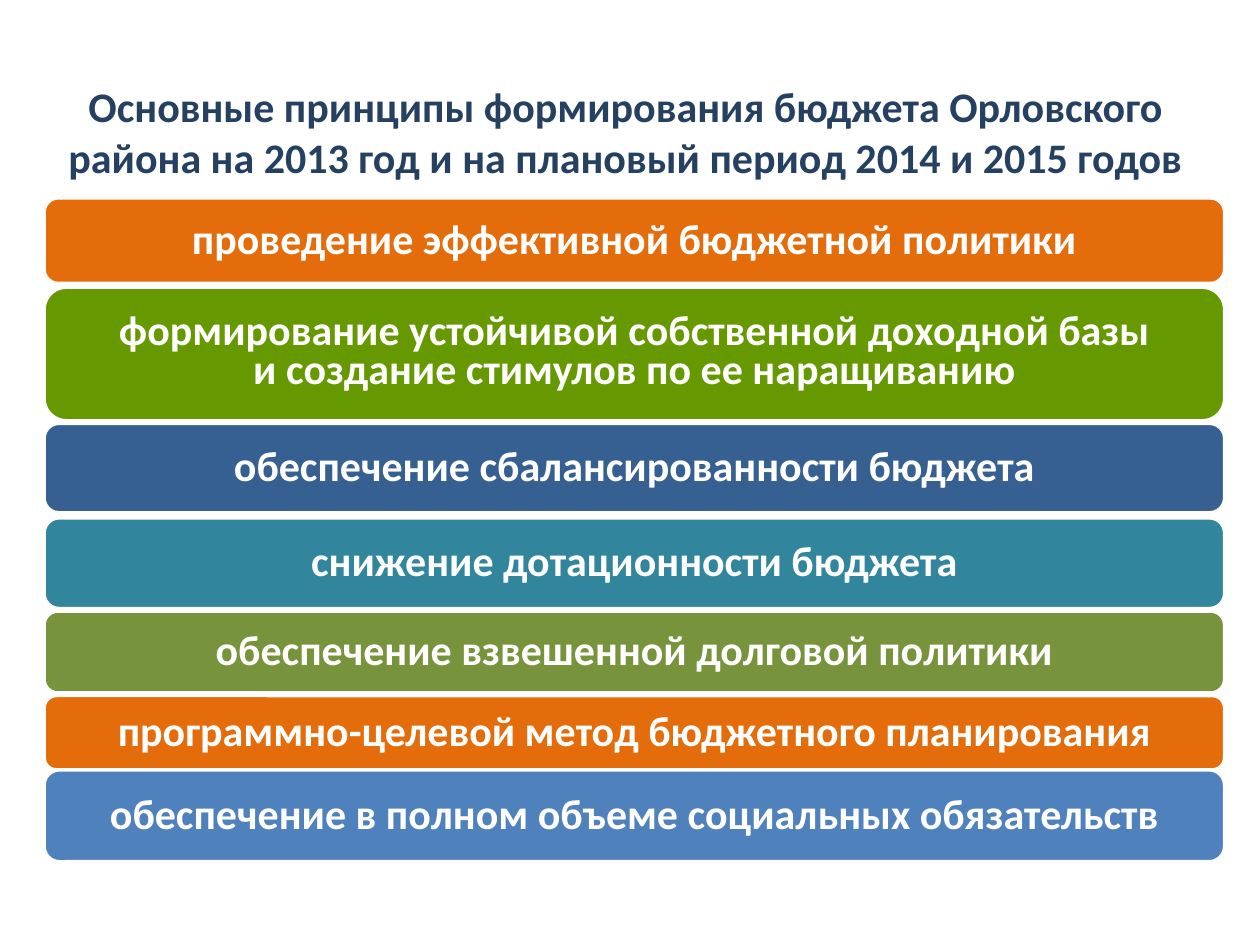
from pptx import Presentation
from pptx.util import Inches, Pt
from pptx.dml.color import RGBColor
from pptx.enum import shapes, text

TITLE = ("Основные принципы формирования бюджета Орловского "
         "района на 2013 год и на плановый период 2014 и 2015 годов")
BARS = [
    (1.57, 0.68, "E46C0A", ["проведение эффективной бюджетной политики"]),
    (2.28, 1.06, "669900", ["формирование устойчивой собственной доходной базы",
                            "и создание стимулов по ее наращиванию"]),
    (3.36, 0.71, "376092", ["обеспечение сбалансированности бюджета"]),
    (4.11, 0.72, "31859C", ["снижение дотационности бюджета"]),
    (4.85, 0.65, "77933C", ["обеспечение взвешенной долговой политики"]),
    (5.52, 0.59, "E46C0A", ["программно-целевой метод бюджетного планирования"]),
    (6.11, 0.73, "4F81BD", ["обеспечение в полном объеме социальных обязательств"]),
]
LEFT, WIDTH = 0.35, 9.37


def rgb(code):
    return RGBColor.from_string(code)


def write(shape, lines, color="FFFFFF", size=24, space=None, inset=0.1):
    frame = shape.text_frame
    frame.word_wrap = True
    frame.vertical_anchor = text.MSO_ANCHOR.MIDDLE
    frame.margin_left = frame.margin_right = Inches(inset)
    frame.margin_top = frame.margin_bottom = Inches(inset)
    for i, line in enumerate(lines):
        para = frame.paragraphs[0] if i == 0 else frame.add_paragraph()
        para.alignment = text.PP_ALIGN.CENTER
        para.line_spacing = space
        run = para.add_run()
        run.text = line
        font = run.font
        font.name, font.size, font.bold = "Calibri", Pt(size), True
        font.color.rgb = rgb(color)


def add_bar(slide, top, height, color, lines):
    bar = slide.shapes.add_shape(
        shapes.MSO_SHAPE.ROUNDED_RECTANGLE,
        Inches(LEFT), Inches(top), Inches(WIDTH), Inches(height))
    bar.shadow.inherit = False
    bar.fill.solid()
    bar.fill.fore_color.rgb = rgb(color)
    bar.line.color.rgb = rgb("FFFFFF")
    bar.line.width = Pt(2)
    write(bar, lines, space=Pt(22) if len(lines) > 1 else 0.9)


def main():
    deck = Presentation()
    deck.slide_width, deck.slide_height = Inches(10), Inches(7.5)
    slide = deck.slides.add_slide(deck.slide_layouts[6])
    title = slide.shapes.add_textbox(
        Inches(0.28), Inches(0.64), Inches(WIDTH), Inches(0.8))
    write(title, [TITLE], color="254061", inset=0.05)
    for bar in BARS:
        add_bar(slide, *bar)
    deck.save("out.pptx")


if __name__ == "__main__":
    main()
